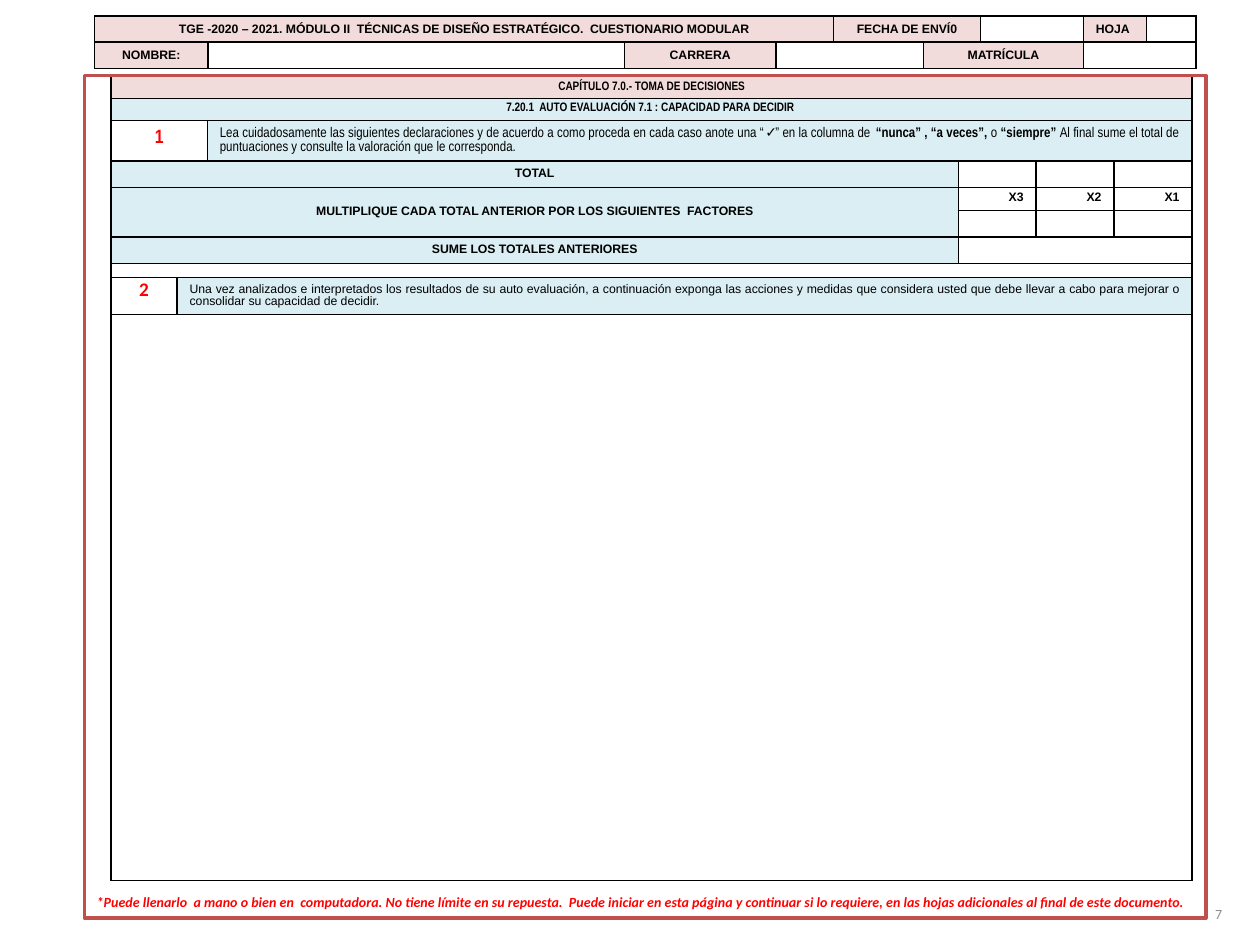
import lxml.etree
import pptx
import pptx.dml.color
import pptx.enum.shapes
import pptx.enum.text
import pptx.oxml.ns
import pptx.util

Cm, Pt = pptx.util.Cm, pptx.util.Pt
ALIGN = pptx.enum.text.PP_ALIGN
MID = pptx.enum.text.MSO_ANCHOR.MIDDLE
RECT = pptx.enum.shapes.MSO_SHAPE.RECTANGLE
qn = pptx.oxml.ns.qn

HUES = {"pink": "F2DCDB", "blue": "DBEEF4", "white": "FFFFFF", "black": "000000",
        "red": "FF0000", "gray": "8C8C8C", "frame": "C0504D"}

# Font, size, bold, italic, colour
FONTS = {
    "head": ("Arial", 7, True, False, "black"),
    "title": ("Arial Narrow", 7, True, False, "black"),
    "body": ("Arial Narrow", 8, False, False, "black"),
    "strong": ("Arial Narrow", 8, True, False, "black"),
    "plain": ("Arial", 7, False, False, "black"),
    "step1": ("Arial Narrow", 11, True, False, "red"),
    "step2": ("Calibri", 11, True, False, "red"),
    "note": ("Calibri", 8, True, True, "red"),
    "page": ("Calibri", 8, False, False, "gray"),
}

# Row, column, row span, column span, fill, alignment, line spacing, runs
HEAD = {
    "at": (1.91, 0.32),
    "cols": [2.28, 8.4, 3.05, 1.16, 1.82, 1.15, 2.07, 1.27, 1],
    "rows": [0.53, 0.53],
    "cells": [
        (0, 0, 1, 4, "pink", "CENTER", None, [
            ("head", "TGE -2020 – 2021. MÓDULO II  TÉCNICAS DE DISEÑO ESTRATÉGICO.  "
                     "CUESTIONARIO MODULAR")]),
        (0, 4, 1, 2, "pink", "CENTER", None, [("head", "FECHA DE ENVÍ0")]),
        (0, 7, 1, 1, "pink", "LEFT", None, [("head", "HOJA")]),
        (1, 0, 1, 1, "pink", "CENTER", None, [("head", "NOMBRE:")]),
        (1, 2, 1, 1, "pink", "CENTER", None, [("head", "CARRERA")]),
        (1, 3, 1, 2, None, "LEFT", None, []),
        (1, 5, 1, 2, "pink", "CENTER", None, [("head", "MATRÍCULA")]),
        (1, 7, 1, 2, None, "LEFT", None, []),
    ],
}

QUIZ = {
    "at": (2.24, 1.53),
    "cols": [1.33, 0.6, 15.14] + [1.57] * 3,
    "rows": [0.46, 0.44, 0.82, 0.53, 0.46, 0.54, 0.53, 0.28, 0.75, 11.41],
    "cells": [
        (0, 0, 1, 6, "pink", "CENTER", None, [
            ("title", "CAPÍTULO 7.0.- TOMA DE DECISIONES")]),
        (1, 0, 1, 6, "blue", "CENTER", 5, [
            ("title", "7.20.1  AUTO EVALUACIÓN 7.1 : CAPACIDAD PARA DECIDIR ")]),
        (2, 0, 1, 2, "white", "CENTER", 8, [("step1", "1")]),
        (2, 2, 1, 4, "blue", "JUSTIFY", 8, [
            ("body", "Lea cuidadosamente las siguientes declaraciones y de acuerdo a como "
                     "proceda en cada caso anote una “✓” en la columna de "),
            ("strong", "“nunca” , “a veces”, "),
            ("body", "o "),
            ("strong", "“siempre” "),
            ("body", "Al final sume el total de puntuaciones y consulte la valoración "
                     "que le corresponda.")]),
        (3, 0, 1, 3, "blue", "CENTER", 7, [("head", "TOTAL")]),
        (4, 0, 2, 3, "blue", "CENTER", 7, [
            ("head", "MULTIPLIQUE CADA TOTAL ANTERIOR POR LOS SIGUIENTES  FACTORES")]),
        *[(4, 3 + i, 1, 1, "white", "RIGHT", 6, [("head", f"X{3 - i}")])
          for i in range(3)],
        (6, 0, 1, 3, "blue", "CENTER", 7, [("head", "SUME LOS TOTALES ANTERIORES")]),
        (6, 3, 1, 3, "white", "LEFT", None, []),
        (7, 0, 1, 6, "white", "LEFT", None, []),
        (8, 0, 1, 1, "white", "CENTER", 7, [("step2", "2")]),
        (8, 1, 1, 5, "blue", "JUSTIFY", 7, [
            ("plain", "Una vez analizados e interpretados los resultados de su auto "
                      "evaluación, a continuación exponga las acciones y medidas que "
                      "considera usted que debe llevar a cabo para mejorar o consolidar "
                      "su capacidad de decidir.")]),
        (9, 0, 1, 6, "white", "LEFT", None, []),
    ],
}

NOTE = ("*Puede llenarlo  a mano o bien en  computadora. No tiene límite en su repuesta.  "
        "Puede iniciar en esta página y continuar si lo requiere, en las hojas adicionales "
        "al final de este documento.")


def rgb(name):
    return pptx.dml.color.RGBColor.from_string(HUES[name])


def write(frame, runs, align, gap=None):
    para = frame.paragraphs[0]
    para.alignment = ALIGN[align]
    if gap:
        para.line_spacing = Pt(gap)
    for style, text in runs:
        name, size, bold, slant, hue = FONTS[style]
        run = para.add_run()
        run.text = text
        look = {"name": name, "size": Pt(size), "bold": bold, "italic": slant}
        for key, value in look.items():
            setattr(run.font, key, value)
        run.font.color.rgb = rgb(hue)


def border(cell):
    props = cell._tc.get_or_add_tcPr()
    for i, side in enumerate("LRTB"):
        line = lxml.etree.Element(qn(f"a:ln{side}"), w=str(Pt(1)))
        fill = lxml.etree.SubElement(line, qn("a:solidFill"))
        lxml.etree.SubElement(fill, qn("a:srgbClr"), val=HUES["black"])
        props.insert(i, line)


def shrink(cell):
    """Keep an empty cell from stretching its row."""
    para = cell.text_frame.paragraphs[0]
    if not para.runs:
        lxml.etree.SubElement(para._p, qn("a:endParaRPr"), sz="400")


def grid(slide, data):
    cols, rows = data["cols"], data["rows"]
    sizes = [*data["at"], sum(cols), sum(rows)]
    table = slide.shapes.add_table(len(rows), len(cols), *map(Cm, sizes)).table
    table.first_row = table.horz_banding = False
    for parts, key, values in ((table.columns, "width", cols), (table.rows, "height", rows)):
        for part, value in zip(parts, values):
            setattr(part, key, Cm(value))
    for cell in table.iter_cells():
        for key, value in {"margin_top": 0, "margin_bottom": 0,
                           "vertical_anchor": MID}.items():
            setattr(cell, key, value)
        cell.fill.background()
    for row, col, down, wide, fill, align, gap, runs in data["cells"]:
        cell = table.cell(row, col)
        if down * wide > 1:
            cell.merge(table.cell(row + down - 1, col + wide - 1))
        if fill:
            cell.fill.solid()
            cell.fill.fore_color.rgb = rgb(fill)
        write(cell.text_frame, runs, align, gap)
    for cell in table.iter_cells():
        shrink(cell)
        border(cell)


def label(shape, runs, align):
    frame = shape.text_frame
    frame.word_wrap = True
    frame.vertical_anchor = MID
    write(frame, runs, align)


def main():
    deck = pptx.Presentation()
    deck.slide_width, deck.slide_height = Cm(25.4), Cm(19.05)
    slide = deck.slides.add_slide(deck.slide_layouts[6])
    shapes = slide.shapes

    note = shapes.add_shape(RECT, Cm(1.7), Cm(17.93), Cm(22.81), Cm(0.51))
    note.shadow.inherit = False
    note.fill.solid()
    note.fill.fore_color.rgb = rgb("white")
    note.line.fill.background()
    label(note, [("note", NOTE)], "LEFT")

    page = shapes.add_textbox(Cm(18.97), Cm(17.91), Cm(5.92), Cm(1.02))
    label(page, [("page", "7")], "RIGHT")

    grid(slide, QUIZ)

    frame = shapes.add_shape(RECT, Cm(1.7), Cm(1.52), Cm(22.61), Cm(16.99))
    frame.shadow.inherit = False
    frame.fill.background()
    frame.line.color.rgb = rgb("frame")
    frame.line.width = Pt(2)

    grid(slide, HEAD)
    deck.save("out.pptx")


if __name__ == "__main__":
    main()
